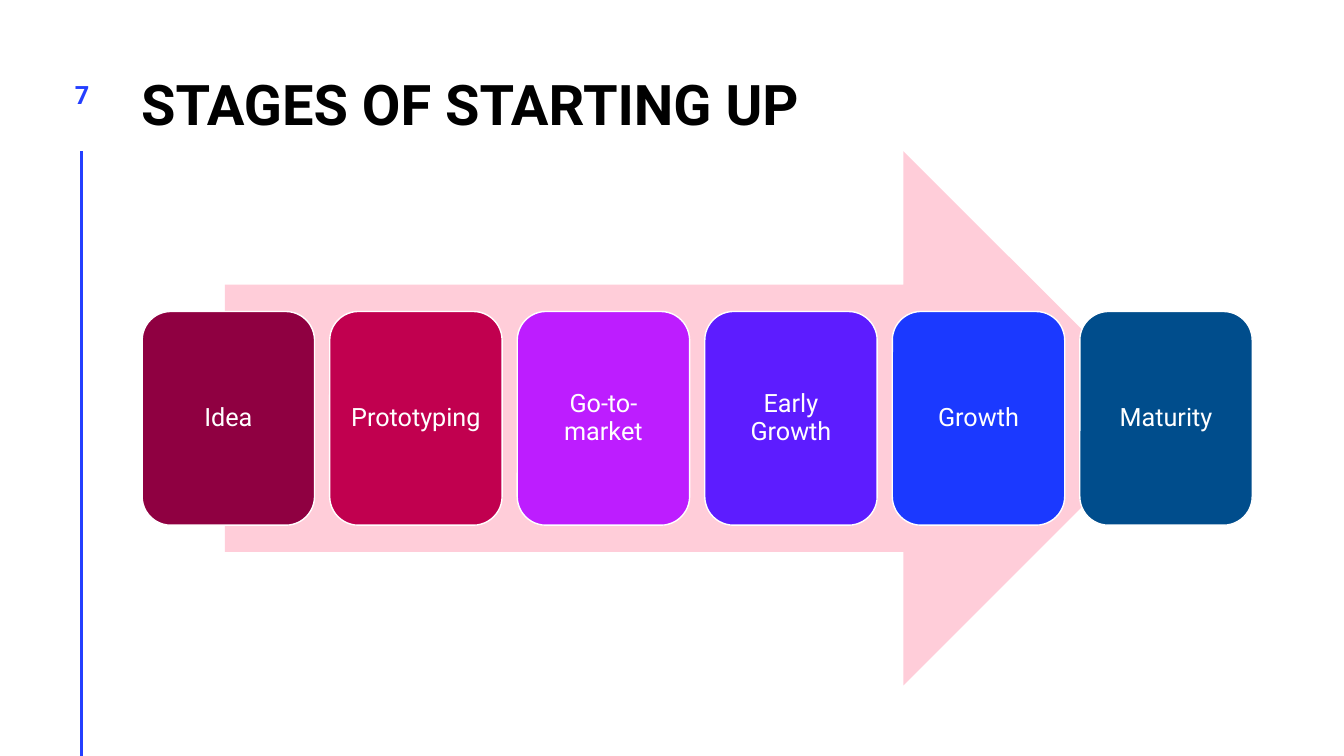
from lxml import etree
from pptx import Presentation
from pptx import util as u
from pptx.dml.color import RGBColor
from pptx.enum import shapes, text
from pptx.oxml.ns import qn

FONT = "Roboto"
ACCENT = "243FFF"
STAGES = [
    ("Idea", "8F0041"),
    ("Prototyping", "C1004F"),
    ("Go-to-market", "BD1DFF"),
    ("Early Growth", "5D1CFF"),
    ("Growth", "1B39FF"),
    ("Maturity", "004D8C"),
]


def rgb(value):
    return RGBColor.from_string(value)


def place(sp, left, top, width, height):
    sp.left, sp.top = u.Inches(left), u.Inches(top)
    sp.width, sp.height = u.Inches(width), u.Inches(height)


def write(sp, words, size, color, align, anchor, bold=False, inset=0):
    tf = sp.text_frame
    tf.word_wrap = True
    tf.auto_size = text.MSO_AUTO_SIZE.NONE
    tf.vertical_anchor = anchor
    tf.margin_left = tf.margin_right = u.Inches(inset)
    tf.margin_top = tf.margin_bottom = u.Inches(inset)
    p = tf.paragraphs[0]
    p.alignment = align
    r = p.add_run()
    r.text = words
    r.font.name, r.font.size, r.font.bold = FONT, u.Pt(size), bold
    r.font.color.rgb = rgb(color)
    return p


def add_shape(s, kind, box, fill, line=None):
    sp = s.shapes.add_shape(kind, *map(u.Inches, box))
    sp.shadow.inherit = False
    sp.fill.solid()
    sp.fill.fore_color.rgb = rgb(fill)
    if line:
        sp.line.color.rgb = rgb(line)
        sp.line.width = u.Pt(1)
    else:
        sp.line.fill.background()
    return sp


def add_rule(s, x, top, bottom):
    cx = s.shapes.add_connector(
        shapes.MSO_CONNECTOR.STRAIGHT,
        u.Inches(x), u.Inches(top), u.Inches(x), u.Inches(bottom))
    cx.line.color.rgb = rgb(ACCENT)
    cx.line.width = u.Pt(2)
    etree.SubElement(cx._element.spPr, qn("a:effectLst"))


def add_stage(s, index, name, fill):
    box = (1.41 + 1.86 * index, 3.09, 1.71, 2.12)
    sp = add_shape(s, shapes.MSO_SHAPE.ROUNDED_RECTANGLE, box, fill, "FFFFFF")
    p = write(sp, name, 18, "FFFFFF", text.PP_ALIGN.CENTER,
              text.MSO_ANCHOR.MIDDLE, inset=0.07)
    p.line_spacing = 0.9


def add_number(s, number):
    sp = s.shapes.add_textbox(*map(u.Inches, (0.53, 0.79, 0.57, 0.57)))
    p = write(sp, number, 18, ACCENT, text.PP_ALIGN.CENTER,
              text.MSO_ANCHOR.TOP, bold=True)
    p.runs[0].font._element.set("spc", "100")


def set_title(s, words):
    sp = s.shapes.title
    place(sp, 1.4, -0.04, 10.82, 1.4)
    p = write(sp, words, 40, "000000", text.PP_ALIGN.LEFT,
              text.MSO_ANCHOR.BOTTOM, bold=True)
    p.line_spacing = u.Pt(40)


def main():
    """Build the slide of start-up stages along an arrow."""
    prs = Presentation()
    prs.slide_width, prs.slide_height = u.Inches(13.33), u.Inches(7.5)
    s = prs.slides.add_slide(prs.slide_layouts[5])
    set_title(s, "STAGES OF STARTING UP")
    add_rule(s, 0.81, 1.5, 7.5)
    add_shape(s, shapes.MSO_SHAPE.RIGHT_ARROW, (2.23, 1.5, 9.38, 5.3), "FFCDD9")
    for index, (name, fill) in enumerate(STAGES):
        add_stage(s, index, name, fill)
    add_number(s, "7")
    prs.save("out.pptx")


if __name__ == "__main__":
    main()
